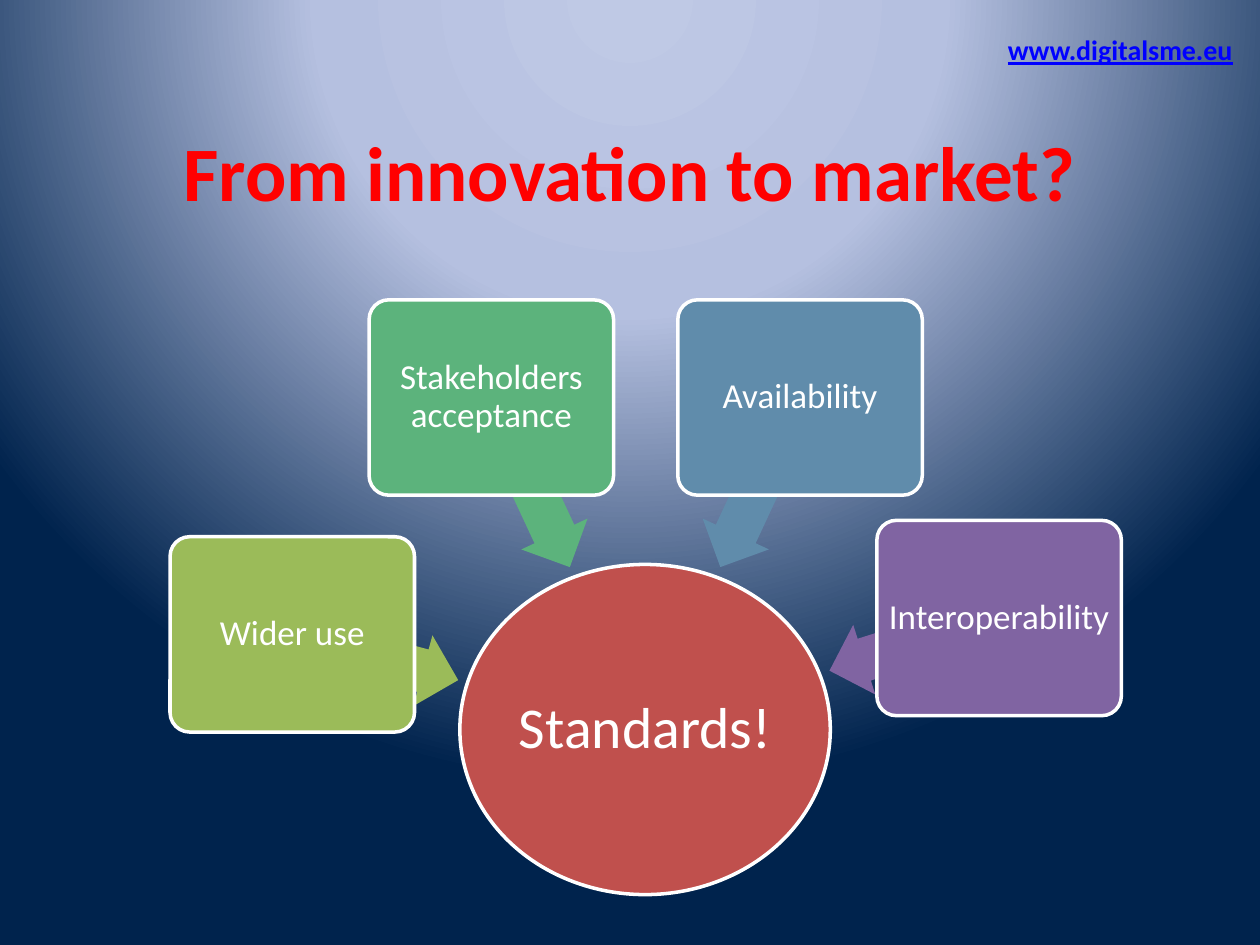
from pptx import Presentation
from pptx import util as u
from pptx.dml.color import RGBColor
from pptx.enum import shapes, text
from pptx.oxml import parse_xml
from pptx.oxml.ns import nsdecls, qn

WHITE = RGBColor(0xFF, 0xFF, 0xFF)
RED = RGBColor(0xFF, 0x00, 0x00)
BLUE = RGBColor(0x00, 0x00, 0xFF)
BRICK = RGBColor(0xC0, 0x50, 0x4D)
LIME = RGBColor(0x9B, 0xBB, 0x59)
GREEN = RGBColor(0x5C, 0xB3, 0x7C)
STEEL = RGBColor(0x60, 0x8C, 0xAB)
PURPLE = RGBColor(0x80, 0x64, 0xA2)

GLOW = [(0, "BFC9E5"), (40, "B5C0E0"), (100, "00234D")]
SHAPE = shapes.MSO_SHAPE
BOX_W, BOX_H, ARROW_H = 1.94, 1.55, 0.58

# label, colour, box left and top, arrow left, top, width and rotation
NODES = [
    ("Wider use", LIME, 1.35, 4.26, 2.29, 4.93, 1.37, 195),
    ("Stakeholders acceptance", GREEN, 2.93, 2.38, 3.47, 3.54, 1.48, 245),
    ("Availability", STEEL, 5.38, 2.38, 5.29, 3.54, 1.48, 295),
    ("Interoperability", PURPLE, 6.96, 4.13, 6.55, 4.82, 1.41, 342.4),
]


class Deck:
    face = "Calibri"

    def __init__(self):
        self.prs = Presentation()
        self.prs.slide_width = u.Inches(10)
        self.prs.slide_height = u.Inches(7.5)
        self.slide = self.prs.slides.add_slide(self.prs.slide_layouts[5])

    def style(self, para, size, color, bold=False):
        font = para.font
        font.name, font.size, font.bold = self.face, u.Pt(size), bold
        font.color.rgb = color

    def glow(self, stops):
        self.slide.background.fill.solid()
        props = self.slide.element.find(".//" + qn("p:bgPr"))
        marks = "".join(
            f'<a:gs pos="{pos * 1000}"><a:srgbClr val="{color}"/></a:gs>'
            for pos, color in stops)
        grad = parse_xml(
            f'<a:gradFill {nsdecls("a")} rotWithShape="1">'
            f'<a:gsLst>{marks}</a:gsLst><a:path path="circle">'
            '<a:fillToRect l="50000" t="-80000" r="50000" b="180000"/>'
            '</a:path></a:gradFill>')
        props.replace(props[0], grad)

    def title(self, words, *area):
        box = self.slide.shapes.title
        box.left, box.top, box.width, box.height = map(u.Inches, area)
        frame = box.text_frame
        frame.text = words
        frame.vertical_anchor = text.MSO_ANCHOR.MIDDLE
        para = frame.paragraphs[0]
        para.alignment = text.PP_ALIGN.CENTER
        self.style(para, 44, RED, True)

    def link(self, words, *area):
        box = self.slide.shapes.add_textbox(*map(u.Inches, area))
        frame = box.text_frame
        frame.text = words
        frame.word_wrap = False
        para = frame.paragraphs[0]
        self.style(para, 16, BLUE, True)
        para.font.underline = True

    def shape(self, kind, color, *area):
        item = self.slide.shapes.add_shape(kind, *map(u.Inches, area))
        item.shadow.inherit = False
        item.fill.solid()
        item.fill.fore_color.rgb = color
        item.line.fill.background()
        return item

    def arrow(self, color, angle, *area):
        item = self.shape(SHAPE.LEFT_ARROW, color, *area)
        item.adjustments[0], item.adjustments[1] = 0.6, 0.5
        item.rotation = angle

    def node(self, kind, words, color, size, inset, *area):
        item = self.shape(kind, color, *area)
        item.line.color.rgb = WHITE
        item.line.width = u.Pt(2)
        if kind == SHAPE.ROUNDED_RECTANGLE:
            item.adjustments[0] = 0.1
        frame = item.text_frame
        frame.text = words
        frame.word_wrap = True
        frame.vertical_anchor = text.MSO_ANCHOR.MIDDLE
        frame.margin_left = frame.margin_right = u.Inches(inset)
        frame.margin_top = frame.margin_bottom = u.Inches(inset)
        para = frame.paragraphs[0]
        para.alignment = text.PP_ALIGN.CENTER
        para.line_spacing = 0.9
        self.style(para, size, WHITE)


def main():
    deck = Deck()

    # Background and headings
    deck.glow(GLOW)
    deck.link("www.digitalsme.eu", 7.9, 0.21, 2.04, 0.4)
    deck.title("From innovation to market?", 0.5, 0.73, 9, 1.25)

    # Centre of the diagram
    deck.node(SHAPE.OVAL, "Standards!", BRICK, 33, 0.02,
              3.65, 4.48, 2.94, 2.62)

    # Boxes, each over its arrow to the centre
    for words, color, left, top, tail, level, length, angle in NODES:
        deck.arrow(color, angle, tail, level, length, ARROW_H)
        deck.node(SHAPE.ROUNDED_RECTANGLE, words, color, 20, 0.04,
                  left, top, BOX_W, BOX_H)

    deck.prs.save("out.pptx")


if __name__ == "__main__":
    main()
